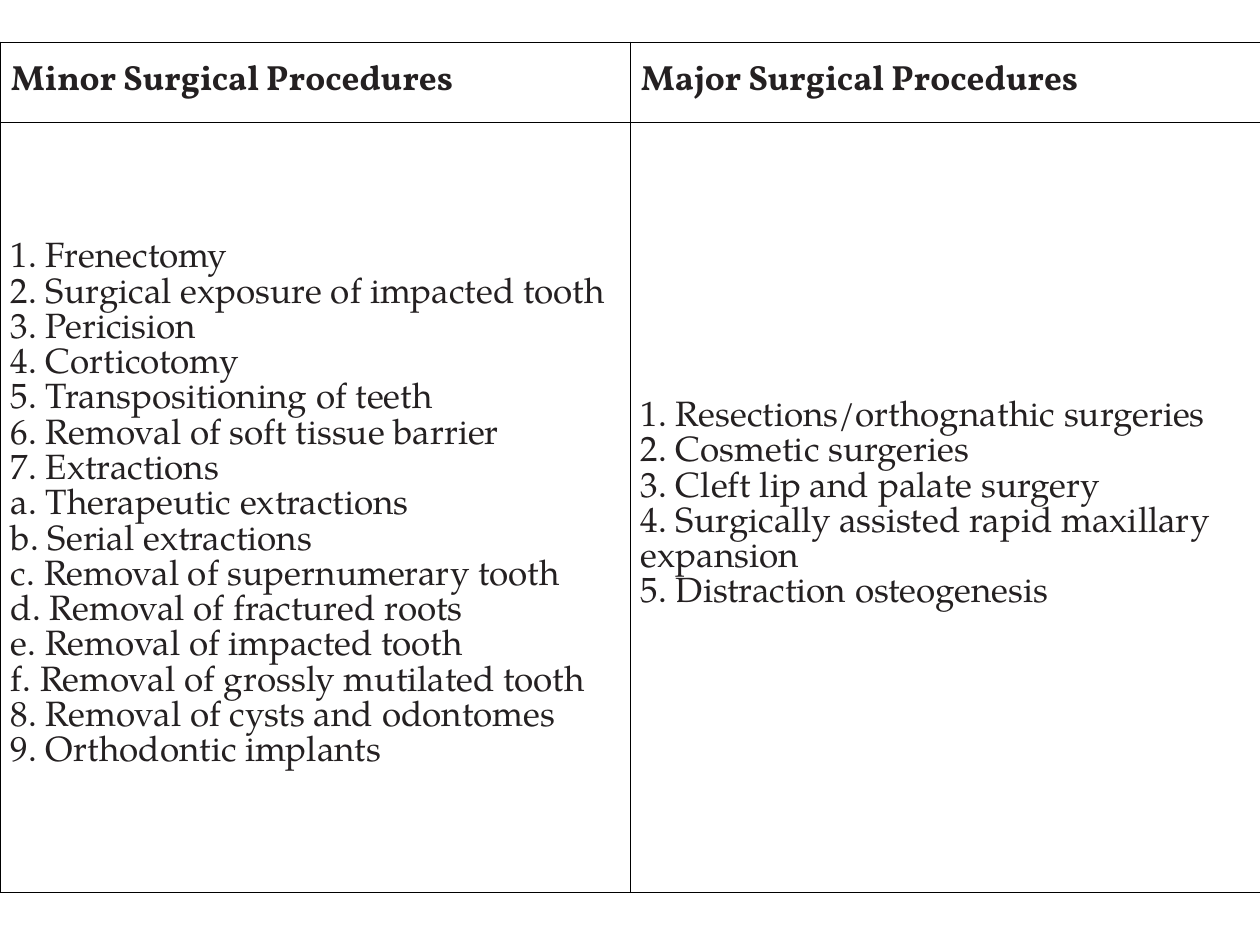
from copy import deepcopy

from lxml import etree
from pptx import Presentation
from pptx.dml.color import RGBColor
from pptx.enum.text import MSO_ANCHOR
from pptx.oxml.ns import qn
from pptx.util import Emu, Pt

MIDDLE = MSO_ANCHOR.MIDDLE
EMU_PER_PX = 914400 / 126
COLORS = {"text": "242021", "border": "000000", "page": "FFFFFF"}
HEADING = {"name": "Vollkorn", "size": Pt(20), "bold": True}
BODY = {"name": "TeX Gyre Pagella", "size": Pt(20), "bold": False}

PROCEDURES = {
    "Minor Surgical Procedures": [
        "1. Frenectomy",
        "2. Surgical exposure of impacted tooth",
        "3. Pericision",
        "4. Corticotomy",
        "5. Transpositioning of teeth",
        "6. Removal of soft tissue barrier",
        "7. Extractions",
        "a. Therapeutic extractions",
        "b. Serial extractions",
        "c. Removal of supernumerary tooth",
        "d. Removal of fractured roots",
        "e. Removal of impacted tooth",
        "f. Removal of grossly mutilated tooth",
        "8. Removal of cysts and odontomes",
        "9. Orthodontic implants",
    ],
    "Major Surgical Procedures": [
        "1. Resections/orthognathic surgeries",
        "2. Cosmetic surgeries",
        "3. Cleft lip and palate surgery",
        "4. Surgically assisted rapid maxillary expansion",
        "5. Distraction osteogenesis",
    ],
}


def px(length):
    return Emu(round(length * EMU_PER_PX))


class SlideBuilder:
    """Holds the style and the current slide, and draws its elements."""

    def __init__(self, presentation, colors):
        self.colors = colors
        self.slide = presentation.slides.add_slide(presentation.slide_layouts[6])

    def table(self, left, top, widths, heights):
        table = self.slide.shapes.add_table(
            len(heights), len(widths), px(left), px(top), px(sum(widths)), px(sum(heights))
        ).table
        for column, width in zip(table.columns, widths):
            column.width = px(width)
        for row, height in zip(table.rows, heights):
            row.height = px(height)
        return table

    def borders(self, cell):
        properties = cell._tc.get_or_add_tcPr()
        for position, side in enumerate(("lnL", "lnR", "lnT", "lnB")):
            line = etree.Element(qn(f"a:{side}"), w=str(Pt(0.5)))
            fill = etree.SubElement(line, qn("a:solidFill"))
            etree.SubElement(fill, qn("a:srgbClr"), val=self.colors["border"])
            properties.insert(position, line)

    def cell(self, cell, lines, font_format):
        layout = {"vertical_anchor": MIDDLE, "margin_left": px(11), "margin_right": px(11),
                  "margin_top": 0, "margin_bottom": 0}
        for attribute, value in layout.items():
            setattr(cell, attribute, value)
        cell.fill.solid()
        cell.fill.fore_color.rgb = RGBColor.from_string(self.colors["page"])
        self.borders(cell)
        paragraph = cell.text_frame.paragraphs[0]
        paragraph.text = "\v".join(lines)
        for run in paragraph.runs:
            for attribute, value in font_format.items():
                setattr(run.font, attribute, value)
            run.font.color.rgb = RGBColor.from_string(self.colors["text"])
        for line_break in paragraph._p.findall(qn("a:br")):
            line_break.append(deepcopy(paragraph.runs[0]._r.rPr))


def main():
    presentation = Presentation()
    presentation.slide_width, presentation.slide_height = px(1260), px(945)
    builder = SlideBuilder(presentation, COLORS)
    comparison = builder.table(0, 42, [630, 630], [80, 770])
    for column, (heading, procedures) in enumerate(PROCEDURES.items()):
        builder.cell(comparison.cell(0, column), [heading], HEADING)
        builder.cell(comparison.cell(1, column), procedures, BODY)
    presentation.save("out.pptx")


if __name__ == "__main__":
    main()
